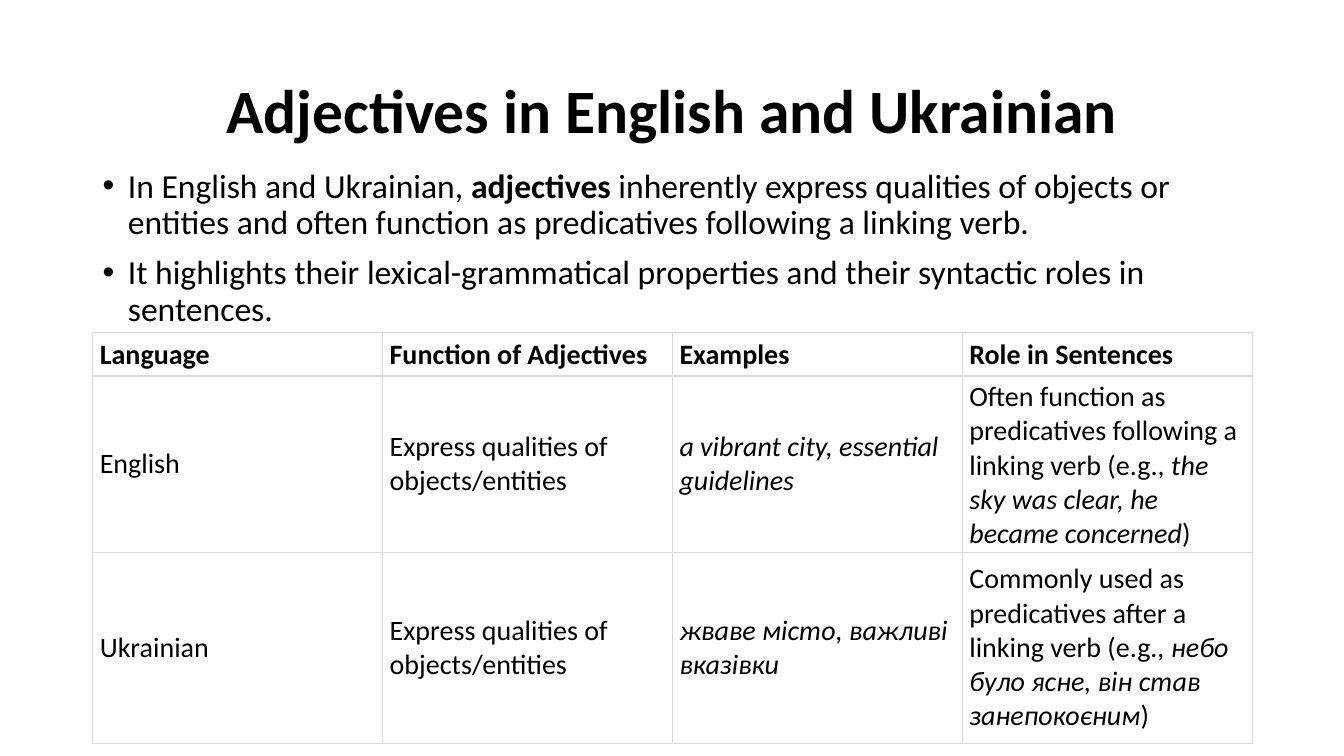
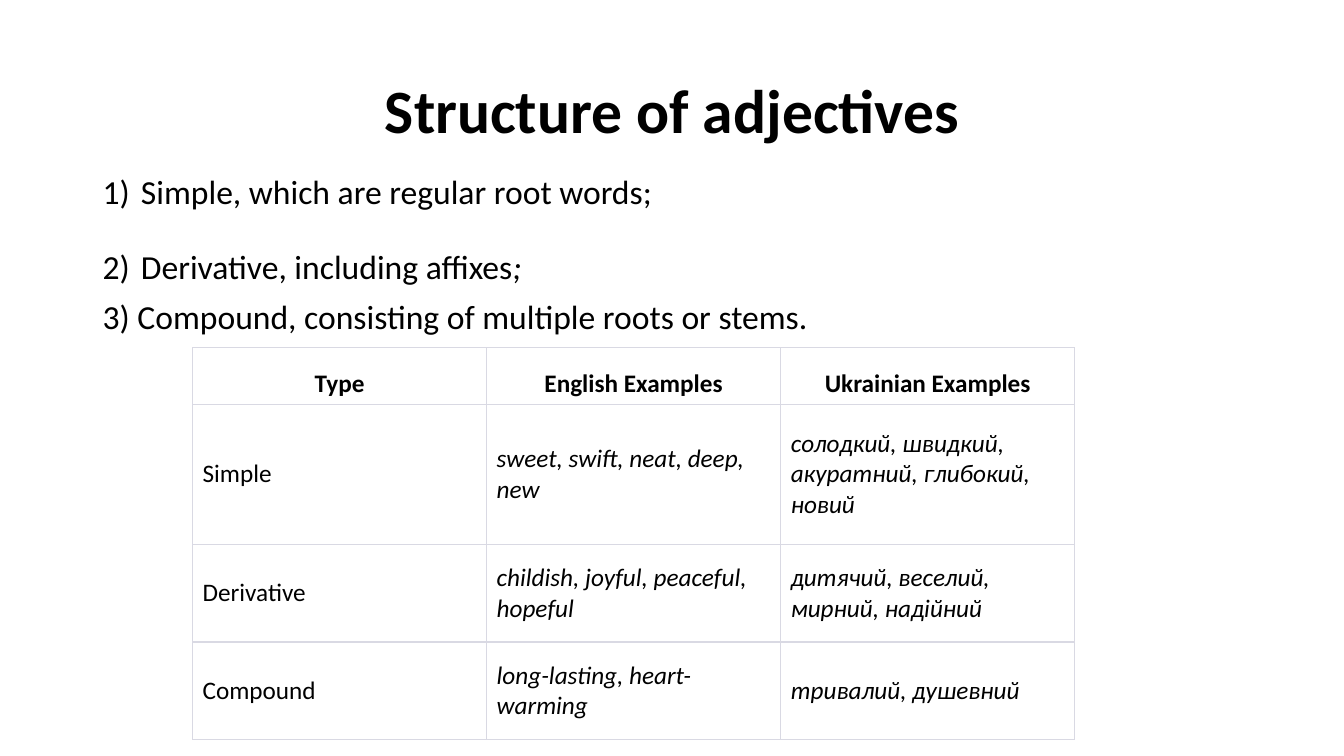
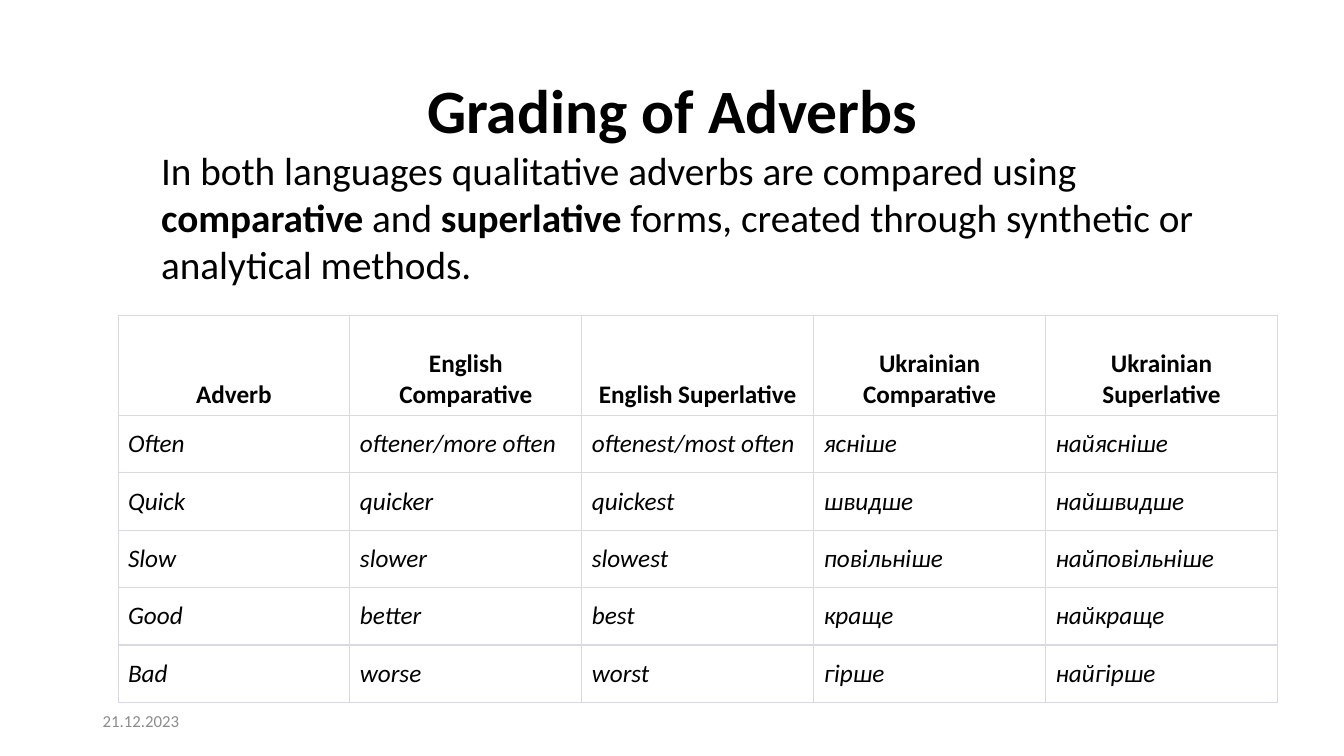
import pptx
import pptx.dml.color
import pptx.enum.text
import pptx.oxml.ns
import pptx.util
import lxml.etree

Inches = pptx.util.Inches
Pt = pptx.util.Pt
ALIGN = pptx.enum.text.PP_ALIGN
ANCHOR = pptx.enum.text.MSO_ANCHOR
qn = pptx.oxml.ns.qn

FONT = "Calibri"
BLACK = pptx.dml.color.RGBColor(0x00, 0x00, 0x00)
GREY = pptx.dml.color.RGBColor(0x8C, 0x8C, 0x8C)
BORDER = pptx.dml.color.RGBColor(0xD9, 0xD9, 0xE3)

TITLE_BOX = (0.92, 0.4, 11.5, 1.45)
TITLE_FORMAT = {"alignment": ALIGN.CENTER, "line_spacing": 0.9}
BULLET_FORMAT = {"line_spacing": 0.9, "space_before": Pt(10)}
NUMBER_FORMAT = {"alignment": ALIGN.JUSTIFY, "line_spacing": 1.5, "space_before": Pt(10)}

BULLET = ("a:buChar", {"char": "•"}, 0.25)
NUMBER = ("a:buAutoNum", {"type": "arabicParenR"}, 0.38)

SLIDES = [
    {
        "title": "Adjectives in English and Ukrainian",
        "table": {
            "box": (0.92, 3.3, 11.5),
            "row_heights": [0.43, 1.71, 1.9],
            "size": 20,
            "margins": (0.07, 0.04),
            "header_alignment": ALIGN.LEFT,
            "italic_columns": {2},
            "rows": [
                ["Language", "Function of Adjectives", "Examples", "Role in Sentences"],
                ["English", "Express qualities of objects/entities",
                 "a vibrant city, essential guidelines",
                 [("Often function as predicatives following a linking verb (e.g., ", ""),
                  ("the sky was clear, he became concerned", "i"), (")", "")]],
                ["Ukrainian", "Express qualities of objects/entities",
                 "жваве місто, важливі вказівки",
                 [("Commonly used as predicatives after a linking verb (e.g", ""),
                  ("., небо було ясне, він став занепокоєним", "i"), (")", "")]],
            ],
        },
        "texts": [{
            "box": (0.92, 1.63, 11.5, 1.7),
            "size": 24,
            "paragraphs": [
                ([("In English and Ukrainian, ", ""), ("adjectives ", "b"),
                  ("inherently express qualities of objects or entities and often function "
                   "as predicatives following a linking verb.", "")], BULLET_FORMAT, BULLET),
                ("It highlights their lexical-grammatical properties and their syntactic "
                 "roles in sentences.", BULLET_FORMAT, BULLET),
            ],
        }],
    },
    {
        "title": "Structure of adjectives",
        "table": {
            "box": (1.91, 3.45, 8.75),
            "row_heights": [0.56, 1.39, 0.97, 0.97],
            "size": 18,
            "margins": (0.1, 0.05),
            "header_alignment": ALIGN.CENTER,
            "italic_columns": {1, 2},
            "rows": [
                ["Type", "English Examples", "Ukrainian Examples"],
                ["Simple", "sweet, swift, neat, deep, new",
                 "солодкий, швидкий, акуратний, глибокий, новий"],
                ["Derivative", "childish, joyful, peaceful, hopeful",
                 "дитячий, веселий, мирний, надійний"],
                ["Compound", "long-lasting, heart-warming", "тривалий, душевний"],
            ],
        },
        "texts": [{
            "box": (0.92, 1.45, 11.5, 2),
            "size": 24,
            "paragraphs": [
                ("Simple, which are regular root words;", NUMBER_FORMAT, NUMBER),
                ([("Derivative, including affixes", ""), (";", "i")], NUMBER_FORMAT, NUMBER),
                ("3) Compound, consisting of multiple roots or stems.", BULLET_FORMAT, None),
            ],
        }],
    },
    {
        "title": "Grading of Adverbs",
        "table": {
            "box": (1.17, 3.13, 11.5),
            "row_heights": [0.99] + [0.57] * 5,
            "size": 18,
            "margins": (0.1, 0.05),
            "header_alignment": ALIGN.CENTER,
            "italic_columns": {0, 1, 2, 3, 4},
            "rows": [
                ["Adverb", "English Comparative", "English Superlative",
                 "Ukrainian Comparative", "Ukrainian Superlative"],
                ["Often", "oftener/more often", "oftenest/most often", "ясніше", "найясніше"],
                ["Quick", "quicker", "quickest", "швидше", "найшвидше"],
                ["Slow", "slower", "slowest", "повільніше", "найповільніше"],
                ["Good", "better", "best", "краще", "найкраще"],
                ["Bad", "worse", "worst", "гірше", "найгірше"],
            ],
        },
        "texts": [
            {
                "box": (0.92, 6.95, 3, 0.4),
                "size": 12,
                "color": GREY,
                "anchor": ANCHOR.MIDDLE,
                "paragraphs": [("21.12.2023", {}, None)],
            },
            {
                "box": (1.5, 1.4, 11.04, 1.51),
                "size": 28,
                "paragraphs": [
                    ([("In both languages qualitative adverbs are compared using ", ""),
                      ("comparative ", "b"), ("and ", ""), ("superlative ", "b"),
                      ("forms, created through synthetic or analytical methods.", "")], {}, None),
                ],
            },
        ],
    },
]


def set_attributes(target, values):
    for name, value in values.items():
        setattr(target, name, value)


def write_runs(paragraph, content, size, color=BLACK, style=""):
    runs = [(content, style)] if isinstance(content, str) else content
    for text, run_style in runs:
        run = paragraph.add_run()
        run.text = text
        set_attributes(run.font, {"name": FONT, "size": Pt(size),
                                  "bold": "b" in run_style, "italic": "i" in run_style})
        run.font.color.rgb = color


def add_marker(paragraph, marker):
    tag, attributes, indent = marker
    properties = paragraph._p.get_or_add_pPr()
    properties.set("marL", str(Inches(indent)))
    properties.set("indent", str(-Inches(indent)))
    lxml.etree.SubElement(properties, qn("a:buFont"), typeface="Arial")
    lxml.etree.SubElement(properties, qn(tag), attributes)


def add_text(slide, box, size, paragraphs, color=BLACK, anchor=ANCHOR.TOP):
    frame = slide.shapes.add_textbox(*map(Inches, box)).text_frame
    set_attributes(frame, {"word_wrap": True, "vertical_anchor": anchor})
    for index, (content, values, marker) in enumerate(paragraphs):
        paragraph = frame.add_paragraph() if index else frame.paragraphs[0]
        set_attributes(paragraph, values)
        if marker:
            add_marker(paragraph, marker)
        write_runs(paragraph, content, size, color)


def set_borders(cell, widths):
    properties = cell._tc.get_or_add_tcPr()
    for index, (side, width) in enumerate(widths.items()):
        line = lxml.etree.Element(qn("a:ln" + side), w=str(Pt(width)))
        fill = lxml.etree.SubElement(line, qn("a:solidFill"))
        lxml.etree.SubElement(fill, qn("a:srgbClr"), val=str(BORDER))
        properties.insert(index, line)


def add_table(slide, box, row_heights, size, margins, header_alignment, italic_columns, rows):
    left, top, width = box
    column_count = len(rows[0])
    table = slide.shapes.add_table(
        len(rows), column_count, Inches(left), Inches(top),
        Inches(width), Inches(sum(row_heights))).table
    set_attributes(table, {"first_row": False, "horz_banding": False})
    for column in table.columns:
        column.width = Inches(width / column_count)
    side_margin, end_margin = map(Inches, margins)
    last_row = len(rows) - 1
    for row_index, values in enumerate(rows):
        table.rows[row_index].height = Inches(row_heights[row_index])
        is_header = row_index == 0
        for column_index, content in enumerate(values):
            cell = table.cell(row_index, column_index)
            set_attributes(cell, {
                "margin_left": side_margin, "margin_right": side_margin,
                "margin_top": end_margin, "margin_bottom": end_margin,
                "vertical_anchor": ANCHOR.BOTTOM if is_header else ANCHOR.MIDDLE})
            cell.fill.background()
            set_borders(cell, {"L": 0.75, "R": 0.75, "T": 0.75 if is_header else 1,
                               "B": 0.75 if row_index == last_row else 1})
            paragraph = cell.text_frame.paragraphs[0]
            paragraph.alignment = header_alignment if is_header else ALIGN.LEFT
            style = "b" if is_header else "i" if column_index in italic_columns else ""
            write_runs(paragraph, content, size, style=style)


def main():
    presentation = pptx.Presentation()
    set_attributes(presentation, {"slide_width": Inches(13.33), "slide_height": Inches(7.5)})
    for content in SLIDES:
        slide = presentation.slides.add_slide(presentation.slide_layouts[6])
        title = [([(content["title"], "b")], TITLE_FORMAT, None)]
        add_text(slide, TITLE_BOX, 44, title, anchor=ANCHOR.MIDDLE)
        add_table(slide, **content["table"])
        for text in content["texts"]:
            add_text(slide, **text)
    presentation.save("out.pptx")


if __name__ == "__main__":
    main()
